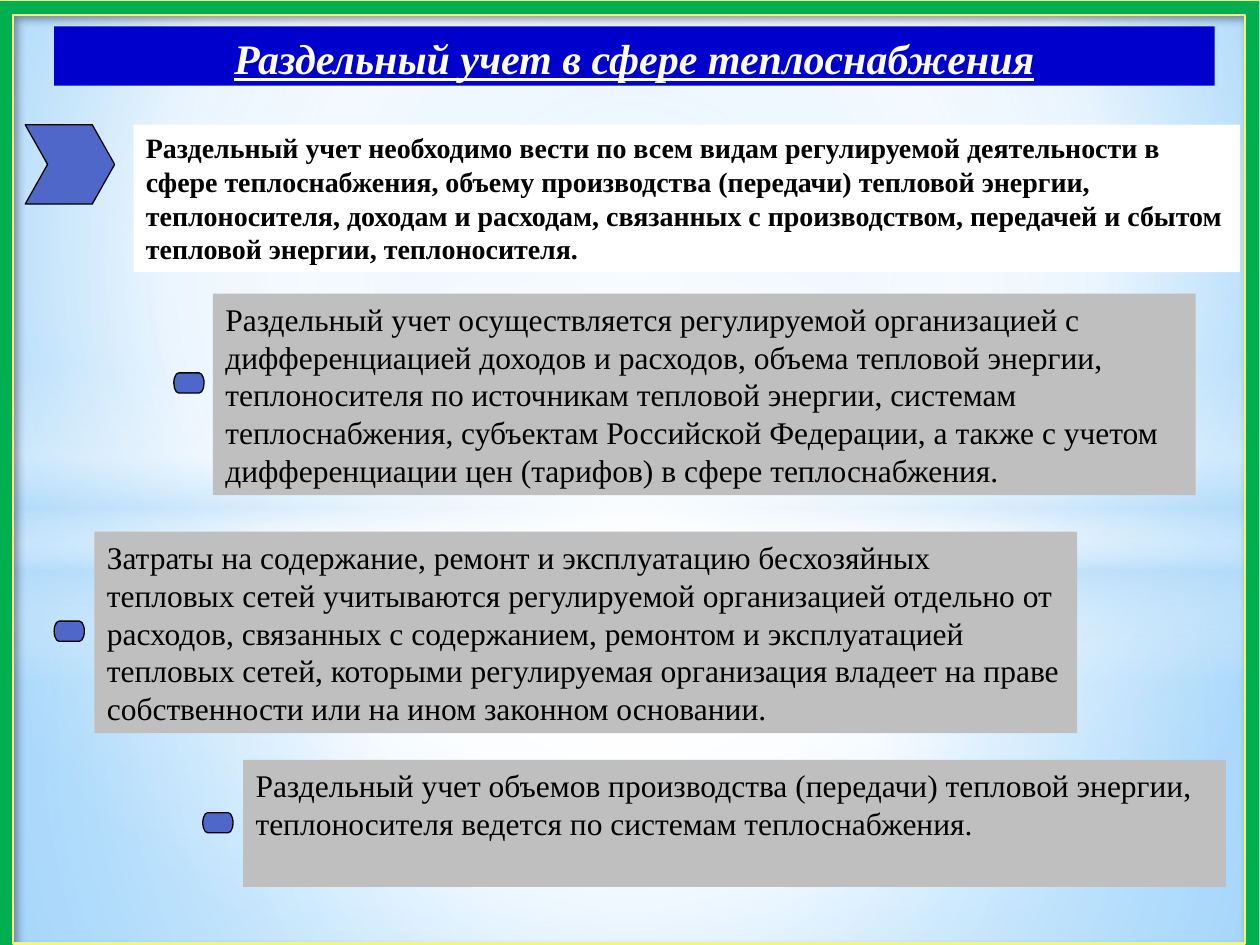
from dataclasses import dataclass
from typing import Optional

from lxml import etree
from pptx import Presentation
from pptx.dml.color import RGBColor
from pptx.enum.shapes import MSO_SHAPE
from pptx.enum.text import MSO_ANCHOR, MSO_AUTO_SIZE, PP_ALIGN
from pptx.oxml.ns import qn
from pptx.util import Inches, Pt

RECTANGLE = MSO_SHAPE.RECTANGLE
OVAL = MSO_SHAPE.OVAL
FRAME = MSO_SHAPE.FRAME
CHEVRON = MSO_SHAPE.CHEVRON
TERMINATOR = MSO_SHAPE.FLOWCHART_TERMINATOR
TOP = MSO_ANCHOR.TOP
MIDDLE = MSO_ANCHOR.MIDDLE
LEFT = PP_ALIGN.LEFT
CENTER = PP_ALIGN.CENTER
NO_AUTO_SIZE = MSO_AUTO_SIZE.NONE

FONT = "Times New Roman"
WHITE = RGBColor(0xFF, 0xFF, 0xFF)
BLACK = RGBColor(0x00, 0x00, 0x00)
GRAY = RGBColor(0xBF, 0xBF, 0xBF)
NAVY = RGBColor(0x00, 0x00, 0xCC)
MARKER_BLUE = RGBColor(0x4E, 0x67, 0xC8)
GREEN = RGBColor(0x00, 0xB0, 0x50)
YELLOW = RGBColor(0xF3, 0xF6, 0x7C)
PALE_BLUE = RGBColor(0xB4, 0xDC, 0xFA)
SKY = RGBColor(0x9E, 0xD5, 0xFF)
DEEP_SKY = RGBColor(0x5B, 0xB9, 0xFF)


@dataclass
class Area:
    left: float
    top: float
    width: float
    height: float


@dataclass
class Stop:
    position: int
    color: RGBColor
    opacity: int = 100


@dataclass
class Gradient:
    stops: list[Stop]
    focus: tuple[int, int, int, int] = (50, 50, 50, 50)
    angle: Optional[int] = None


@dataclass
class Layer:
    kind: int
    area: Area
    gradient: Gradient


@dataclass
class Statement:
    area: Area
    text: str
    fill: RGBColor = GRAY
    size: int = 18
    bold: bool = False
    anchor: int = MIDDLE


@dataclass
class Marker:
    kind: int
    area: Area


SKY_GRADIENT = Gradient([Stop(0, SKY), Stop(60, WHITE), Stop(100, DEEP_SKY)], (20, 10, 20, 60))
LAYERS = [
    Layer(RECTANGLE, Area(0, 4.23, 10, 3.27),
          Gradient([Stop(0, WHITE, 92), Stop(37, WHITE, 77), Stop(100, PALE_BLUE, 80)])),
    Layer(RECTANGLE, Area(0, 0, 10, 4.23),
          Gradient([Stop(0, WHITE, 90), Stop(48, WHITE, 63), Stop(100, PALE_BLUE, 80)])),
    Layer(RECTANGLE, Area(0, 2.9, 10, 2.5),
          Gradient([Stop(0, WHITE, 0), Stop(29, WHITE, 30), Stop(45, PALE_BLUE, 40),
                    Stop(55, WHITE, 26), Stop(65, PALE_BLUE, 60), Stop(100, WHITE, 0)], angle=90)),
    Layer(OVAL, Area(0, 1.75, 10, 5.58), Gradient([Stop(0, WHITE), Stop(54, WHITE, 0)])),
]
STATEMENTS = [
    Statement(Area(1.06, 0.99, 8.78, 1.17),
              "Раздельный учет необходимо вести по всем видам регулируемой деятельности в сфере "
              "теплоснабжения, объему производства (передачи) тепловой энергии, теплоносителя, "
              "доходам и расходам, связанных с производством, передачей и сбытом тепловой энергии, "
              "теплоносителя.", WHITE, 16, True, TOP),
    Statement(Area(1.69, 2.33, 7.8, 1.6),
              "Раздельный учет осуществляется регулируемой организацией с дифференциацией доходов "
              "и расходов, объема тепловой энергии, теплоносителя по источникам тепловой энергии, "
              "системам теплоснабжения, субъектам Российской Федерации, а также с учетом "
              "дифференциации цен (тарифов) в сфере теплоснабжения."),
    Statement(Area(0.75, 4.22, 7.8, 1.6),
              "Затраты на содержание, ремонт и эксплуатацию бесхозяйных тепловых сетей учитываются "
              "регулируемой организацией отдельно от расходов, связанных с содержанием, ремонтом и "
              "эксплуатацией тепловых сетей, которыми регулируемая организация владеет на праве "
              "собственности или на ином законном основании."),
    Statement(Area(1.93, 6.03, 7.8, 1.01),
              "Раздельный учет объемов производства (передачи) тепловой энергии, теплоносителя "
              "ведется по системам теплоснабжения.", anchor=TOP),
]
MARKERS = [Marker(CHEVRON, Area(0.2, 0.99, 0.71, 0.63))] + [
    Marker(TERMINATOR, Area(left, top, 0.24, 0.16))
    for left, top in ((1.38, 2.96), (0.43, 4.93), (1.61, 6.45))
]


def add_color(parent, color: RGBColor, opacity: int) -> None:
    element = etree.SubElement(parent, qn("a:srgbClr"), val=str(color))
    if opacity < 100:
        etree.SubElement(element, qn("a:alpha"), val=str(opacity * 1000))


def apply_gradient(properties, gradient: Gradient) -> None:
    fill = etree.Element(qn("a:gradFill"), rotWithShape="1")
    stops = etree.SubElement(fill, qn("a:gsLst"))
    for stop in gradient.stops:
        element = etree.SubElement(stops, qn("a:gs"), pos=str(stop.position * 1000))
        add_color(element, stop.color, stop.opacity)
    if gradient.angle is None:
        circle = etree.SubElement(fill, qn("a:path"))
        circle.set("path", "circle")
        focus = etree.SubElement(circle, qn("a:fillToRect"))
        for side, value in zip("ltrb", gradient.focus):
            focus.set(side, str(value * 1000))
    else:
        etree.SubElement(fill, qn("a:lin"), ang=str(gradient.angle * 60000), scaled="0")
    properties.replace(properties.find(qn("a:solidFill")), fill)


def place(shape, area: Area) -> None:
    shape.left, shape.top = Inches(area.left), Inches(area.top)
    shape.width, shape.height = Inches(area.width), Inches(area.height)


def add_shape(page, kind: int, area: Area, fill: RGBColor,
              line: Optional[RGBColor] = None, line_width: float = 0.75):
    shape = page.shapes.add_shape(kind, 0, 0, 0, 0)
    place(shape, area)
    shape.shadow.inherit = False
    shape.fill.solid()
    shape.fill.fore_color.rgb = fill
    if line is None:
        shape.line.fill.background()
    else:
        shape.line.color.rgb = line
        shape.line.width = Pt(line_width)
    return shape


def write(shape, text: str, size: int, color: RGBColor, anchor: int, alignment: int):
    frame = shape.text_frame
    frame.word_wrap = True
    frame.auto_size = NO_AUTO_SIZE
    frame.vertical_anchor = anchor
    para = frame.paragraphs[0]
    para.alignment = alignment
    span = para.add_run()
    span.text = text
    span.font.name = FONT
    span.font.size = Pt(size)
    span.font.color.rgb = color
    return span


def add_backdrop(page) -> None:
    page.background.fill.solid()
    apply_gradient(page.background._cSld.bg.bgPr, SKY_GRADIENT)
    for layer in LAYERS:
        shape = add_shape(page, layer.kind, layer.area, WHITE)
        apply_gradient(shape._element.spPr, layer.gradient)
    border = add_shape(page, FRAME, Area(-0.02, 0, 10.02, 7.61), GREEN, YELLOW, 1.25)
    border.adjustments[0] = 0.016
    effects = border._element.spPr.find(qn("a:effectLst"))
    shadow = etree.SubElement(effects, qn("a:outerShdw"), blurRad=str(Pt(4)),
                              dist=str(Pt(3)), dir=str(45 * 60000), rotWithShape="0")
    add_color(shadow, BLACK, 40)


def add_title(page) -> None:
    title = page.shapes.title
    page.shapes._spTree.append(title._element)
    place(title, Area(0.43, 0.21, 9.21, 0.47))
    title.fill.solid()
    title.fill.fore_color.rgb = NAVY
    span = write(title, "Раздельный учет в сфере теплоснабжения", 24, WHITE, TOP, CENTER)
    span.font.bold = span.font.italic = span.font.underline = True


def add_statement(page, statement: Statement) -> None:
    box = add_shape(page, RECTANGLE, statement.area, statement.fill)
    span = write(box, statement.text, statement.size, BLACK, statement.anchor, LEFT)
    span.font.bold = statement.bold


def add_marker(page, marker: Marker) -> None:
    shape = add_shape(page, marker.kind, marker.area, MARKER_BLUE, BLACK)
    if marker.kind == CHEVRON:
        shape.adjustments[0] = 0.282


def main() -> None:
    deck = Presentation()
    deck.slide_width, deck.slide_height = Inches(10), Inches(7.5)
    page = deck.slides.add_slide(deck.slide_layouts[5])
    add_backdrop(page)
    add_title(page)
    for statement in STATEMENTS:
        add_statement(page, statement)
    for marker in MARKERS:
        add_marker(page, marker)
    deck.save("out.pptx")


if __name__ == "__main__":
    main()
